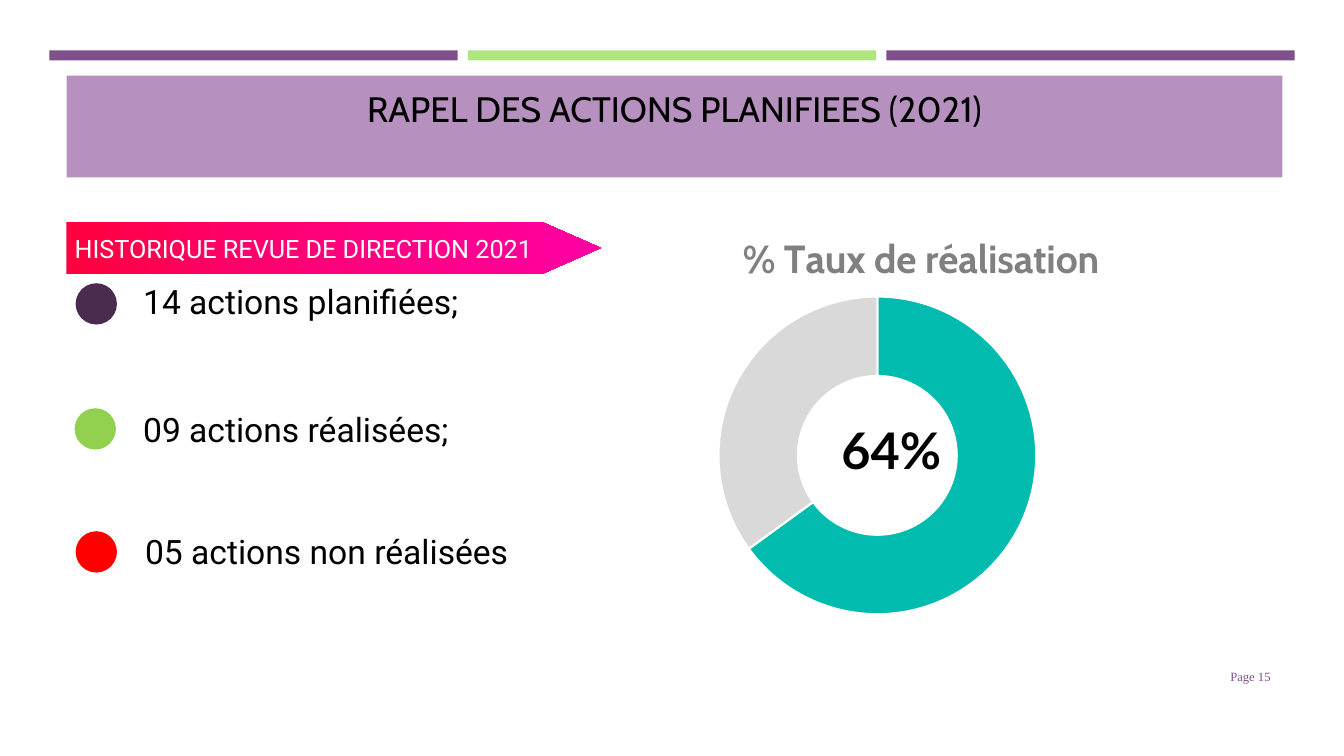
from lxml.etree import SubElement
from pptx import Presentation
from pptx.chart.data import CategoryChartData
from pptx.dml.color import RGBColor
from pptx.enum.chart import XL_CHART_TYPE
from pptx.enum.shapes import MSO_SHAPE
from pptx.enum.text import MSO_ANCHOR, PP_ALIGN
from pptx.oxml import parse_xml
from pptx.oxml.ns import nsdecls, qn
from pptx.util import Inches, Pt

PURPLE = RGBColor(0x7F, 0x50, 0x8B)
LIGHT_GREEN = RGBColor(0xAD, 0xE6, 0x7F)
LILAC = RGBColor(0xB6, 0x90, 0xBF)
DARK_PURPLE = RGBColor(0x4B, 0x2C, 0x50)
GREEN = RGBColor(0x92, 0xD0, 0x50)
RED = RGBColor(0xFF, 0x00, 0x00)
TEAL = RGBColor(0x01, 0xBB, 0xAE)
PALE_GREY = RGBColor(0xD9, 0xD9, 0xD9)
GREY = RGBColor(0x80, 0x80, 0x80)
BLACK = RGBColor(0, 0, 0)
WHITE = RGBColor(0xFF, 0xFF, 0xFF)

prs = Presentation()
prs.slide_width, prs.slide_height = Inches(13.33), Inches(7.5)
slide = prs.slides.add_slide(prs.slide_layouts[5])
shapes = slide.shapes


def add_label(box, text, size, font, color, align=PP_ALIGN.LEFT,
              inset=0.05, left_inset=0.05, bold=False):
    frame = shapes.add_textbox(*map(Inches, box)).text_frame
    frame.word_wrap = True
    frame.margin_left, frame.margin_right = Inches(left_inset), Inches(inset)
    frame.margin_top = frame.margin_bottom = Inches(0.05)
    paragraph = frame.paragraphs[0]
    paragraph.alignment = align
    run = paragraph.add_run()
    run.text = text
    run.font.size, run.font.name, run.font.bold = Pt(size), font, bold
    run.font.color.rgb = color
    return frame


def place_in_chart(parent, index, **settings):
    for old in parent.findall(qn("c:layout")):
        parent.remove(old)
    layout = parse_xml(f"<c:layout {nsdecls('c')}><c:manualLayout/></c:layout>")
    for tag, value in settings.items():
        SubElement(layout[0], qn(f"c:{tag}")).set("val", str(value))
    parent.insert(index, layout)


# Three bars across the top
for column, color in enumerate((PURPLE, LIGHT_GREEN, PURPLE)):
    bar = shapes.add_shape(MSO_SHAPE.RECTANGLE, Inches(0.49 + 4.15 * column),
                           Inches(0.5), Inches(4.05), Inches(0.1))
    bar.shadow.inherit = False
    bar.fill.solid()
    bar.fill.fore_color.rgb = color
    bar.line.fill.background()

# Title band
title = shapes.title
title.left, title.top = Inches(0.66), Inches(0.75)
title.width, title.height = Inches(12.06), Inches(1.01)
title.fill.solid()
title.fill.fore_color.rgb = LILAC
title.text_frame.vertical_anchor = MSO_ANCHOR.BOTTOM
title.text_frame.margin_bottom = Inches(0.47)
heading = title.text_frame.paragraphs[0]
heading.alignment = PP_ALIGN.CENTER
heading_run = heading.add_run()
heading_run.text = "RAPEL DES ACTIONS PLANIFIEES (2021)"
heading_run.font.size, heading_run.font.name = Pt(25.2), "Cabin"
heading_run.font.color.rgb = BLACK

# Arrow banner with its gradient
outline = shapes.build_freeform(Inches(0.66), Inches(2.2))
outline.add_line_segments([(Inches(x), Inches(y)) for x, y in
                           ((5.37, 2.2), (5.96, 2.46), (5.37, 2.72), (0.66, 2.72))])
banner = outline.convert_to_shape()
banner.shadow.inherit = False
banner.line.fill.background()
banner.fill.gradient()
banner.fill.gradient_angle = 0
stops = banner.element.spPr.find(qn("a:gradFill")).find(qn("a:gsLst"))
for stop in list(stops):
    stops.remove(stop)
for share, color in ((2, "FF0040"), (37, "FF0071"), (99, "FF00A2")):
    stop = SubElement(stops, qn("a:gs"), pos=str(share * 1000))
    SubElement(stop, qn("a:srgbClr"), val=color)
add_label((0.69, 2.27, 5.45, 0.4), "HISTORIQUE REVUE DE DIRECTION 2021",
          18, "Roboto", WHITE)

# Action counts, each with a coloured dot
for dot_left, dot_top, color, text_left, text_top, text in (
        (0.75, 2.81, DARK_PURPLE, 1.29, 2.74, "14 actions planifiées;"),
        (0.74, 4.05, GREEN, 1.29, 4.01, "09 actions réalisées;"),
        (0.75, 5.27, RED, 1.31, 5.22, "05 actions non réalisées")):
    dot = shapes.add_shape(MSO_SHAPE.OVAL, Inches(dot_left), Inches(dot_top),
                           Inches(0.41), Inches(0.41))
    dot.shadow.inherit = False
    dot.fill.solid()
    dot.fill.fore_color.rgb = color
    dot.line.fill.background()
    add_label((text_left, text_top, 4, 0.5), text, 24, "Roboto", BLACK,
              left_inset=0.13)

# Completion rate doughnut
rates = CategoryChartData()
rates.categories = ["1", "2"]
rates.add_series("Series 1", (65, 35))
chart = shapes.add_chart(XL_CHART_TYPE.DOUGHNUT, Inches(6.08), Inches(1.92),
                         Inches(5.52), Inches(4.26), rates).chart
chart.has_legend = False
chart.font.size, chart.font.name = Pt(10), "Cabin"
chart.font.color.rgb = BLACK
chart.has_title = True
chart_heading = chart.chart_title.text_frame.paragraphs[0].add_run()
chart_heading.text = "% Taux de réalisation"
chart_heading.font.size, chart_heading.font.name = Pt(28), "Cabin"
chart_heading.font.bold = True
chart_heading.font.color.rgb = GREY
place_in_chart(chart.chart_title.element, 1, xMode="edge", yMode="edge",
               x=0.22, y=0.07)

doughnut = chart.plots[0]
doughnut.vary_by_categories = True
for index, color in enumerate((TEAL, PALE_GREY)):
    slice_format = doughnut.series[0].points[index].format
    slice_format.fill.solid()
    slice_format.fill.fore_color.rgb = color
    slice_format.line.color.rgb = WHITE
    slice_format.line.width = Pt(1.5)
plot_area = next(chart.element.iter(qn("c:plotArea")))
place_in_chart(plot_area, 0, layoutTarget="inner", xMode="edge", yMode="edge",
               x=0.18, y=0.24, w=0.59, h=0.74)
next(plot_area.iter(qn("c:holeSize"))).set("val", "82")
add_label((8.2, 4.11, 1.28, 0.71), "64%", 36, "Lato", BLACK,
          PP_ALIGN.CENTER, inset=0.1, left_inset=0.1, bold=True)

# Page number
page = add_label((11.55, 6.51, 1.15, 0.4), "Page 15", 9, "Times New Roman",
                 PURPLE, PP_ALIGN.RIGHT, inset=0.1)
page.vertical_anchor = MSO_ANCHOR.MIDDLE

prs.save("out.pptx")
